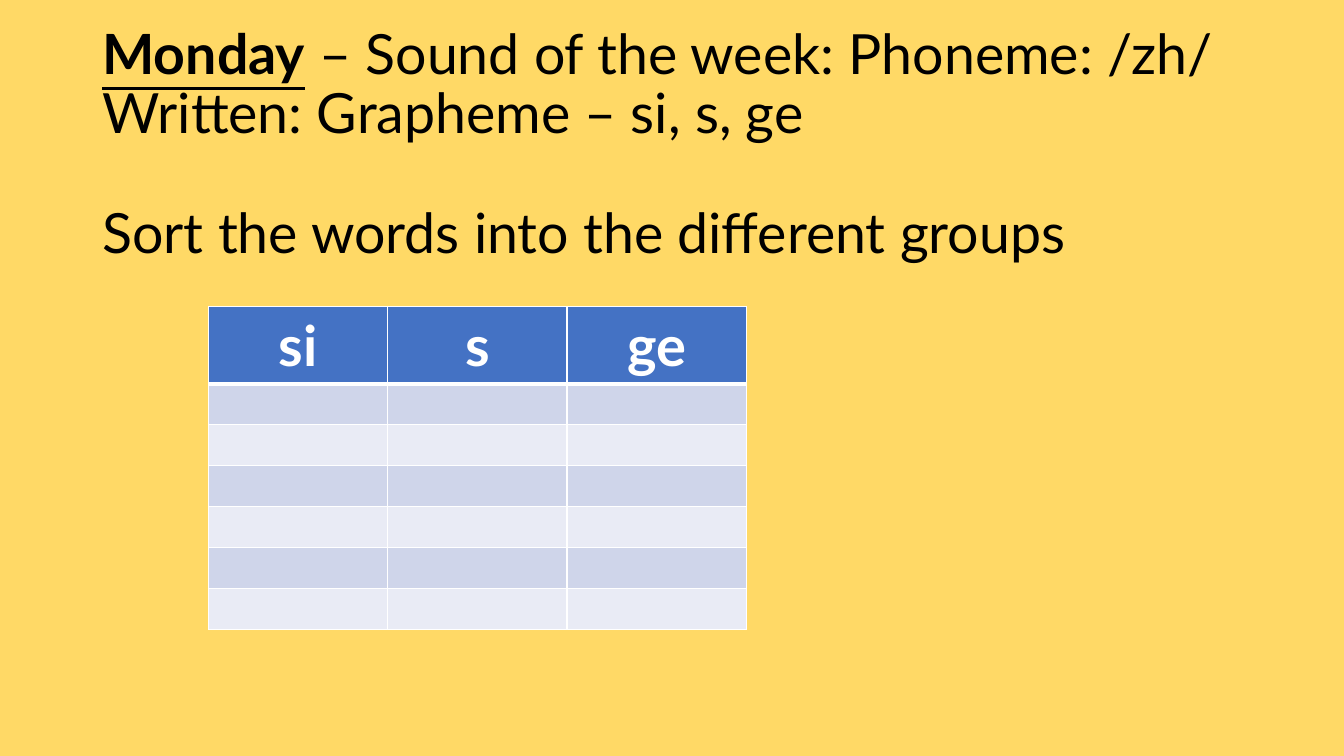
import pptx
import pptx.dml.color
import pptx.enum.text
import pptx.oxml
import pptx.oxml.ns
import pptx.util

Pt = pptx.util.Pt
PP_ALIGN = pptx.enum.text.PP_ALIGN
MSO_ANCHOR = pptx.enum.text.MSO_ANCHOR

COLORS = {
    "background": "FFD966",
    "text": "000000",
    "header": "4472C4",
    "band_dark": "CFD5EA",
    "band_light": "E9EBF5",
    "white": "FFFFFF",
}


def rgb(name):
    return pptx.dml.color.RGBColor.from_string(COLORS[name])


class SlideBuilder:
    font = "Lato"

    def __init__(self, prs):
        self.s = prs.slides.add_slide(prs.slide_layouts[5])
        fill = self.s.background.fill
        fill.solid()
        fill.fore_color.rgb = rgb("background")

    def style_run(self, r, size, color, bold=False, underline=False):
        r.font.name = self.font
        r.font.size = Pt(size)
        r.font.color.rgb = rgb(color)
        r.font.bold = bold
        r.font.underline = underline

    def title(self, left, top, width, height, paragraphs, size, gap):
        """Fill the title with paragraphs, each a list of (text, emphasised) runs."""
        sp = self.s.shapes.title
        sp.left, sp.top, sp.width, sp.height = Pt(left), Pt(top), Pt(width), Pt(height)
        tf = sp.text_frame
        tf.word_wrap = True
        tf.auto_size = pptx.enum.text.MSO_AUTO_SIZE.NONE
        tf.vertical_anchor = MSO_ANCHOR.MIDDLE
        for i, runs in enumerate(paragraphs):
            p = tf.add_paragraph() if i else tf.paragraphs[0]
            p.alignment = PP_ALIGN.LEFT
            p.line_spacing = 0.9
            p.space_before = Pt(gap if i else 0)
            for text, emphasised in runs:
                r = p.add_run()
                r.text = text
                self.style_run(r, size, "text", emphasised, emphasised)

    def border(self, cell, widths):
        """Draw white cell borders; widths are in the order left, right, top, bottom."""
        tc_pr = cell._tc.get_or_add_tcPr()
        for i, (side, width) in enumerate(zip("LRTB", widths)):
            tc_pr.insert(i, pptx.oxml.parse_xml(
                f'<a:ln{side} {pptx.oxml.ns.nsdecls("a")} w="{Pt(width)}">'
                f'<a:solidFill><a:srgbClr val="{COLORS["white"]}"/></a:solidFill>'
                f'</a:ln{side}>'))

    def table(self, left, top, width, headings, size, header_height, body_rows, row_height):
        height = header_height + body_rows * row_height
        table = self.s.shapes.add_table(
            body_rows + 1, len(headings), Pt(left), Pt(top), Pt(width), Pt(height)).table
        for column in table.columns:
            column.width = Pt(width / len(headings))
        for i, row in enumerate(table.rows):
            row.height = Pt(row_height if i else header_height)
            color = ("band_dark" if i % 2 else "band_light") if i else "header"
            for cell in row.cells:
                cell.fill.solid()
                cell.fill.fore_color.rgb = rgb(color)
                self.border(cell, (1, 1, 3 if i == 1 else 1, 1 if i else 3))
        for cell, heading in zip(table.rows[0].cells, headings):
            cell.text_frame.text = heading
            p = cell.text_frame.paragraphs[0]
            p.alignment = PP_ALIGN.CENTER
            self.style_run(p.runs[0], size, "white", bold=True)


def main():
    prs = pptx.Presentation()
    prs.slide_width, prs.slide_height = Pt(960), Pt(540)
    slide = SlideBuilder(prs)
    slide.title(66, 52, 828, 104.4, [
        [("Monday", True),
         (" – Sound of the week: Phoneme: /zh/ Written: Grapheme – si, s, ge", False)],
        [("Sort the words into the different groups", False)],
    ], size=39.6, gap=42.8)
    slide.table(149, 219, 384, ["si", "s", "ge"], size=40,
                header_height=55, body_rows=6, row_height=29.2)
    prs.save("out.pptx")


if __name__ == "__main__":
    main()
